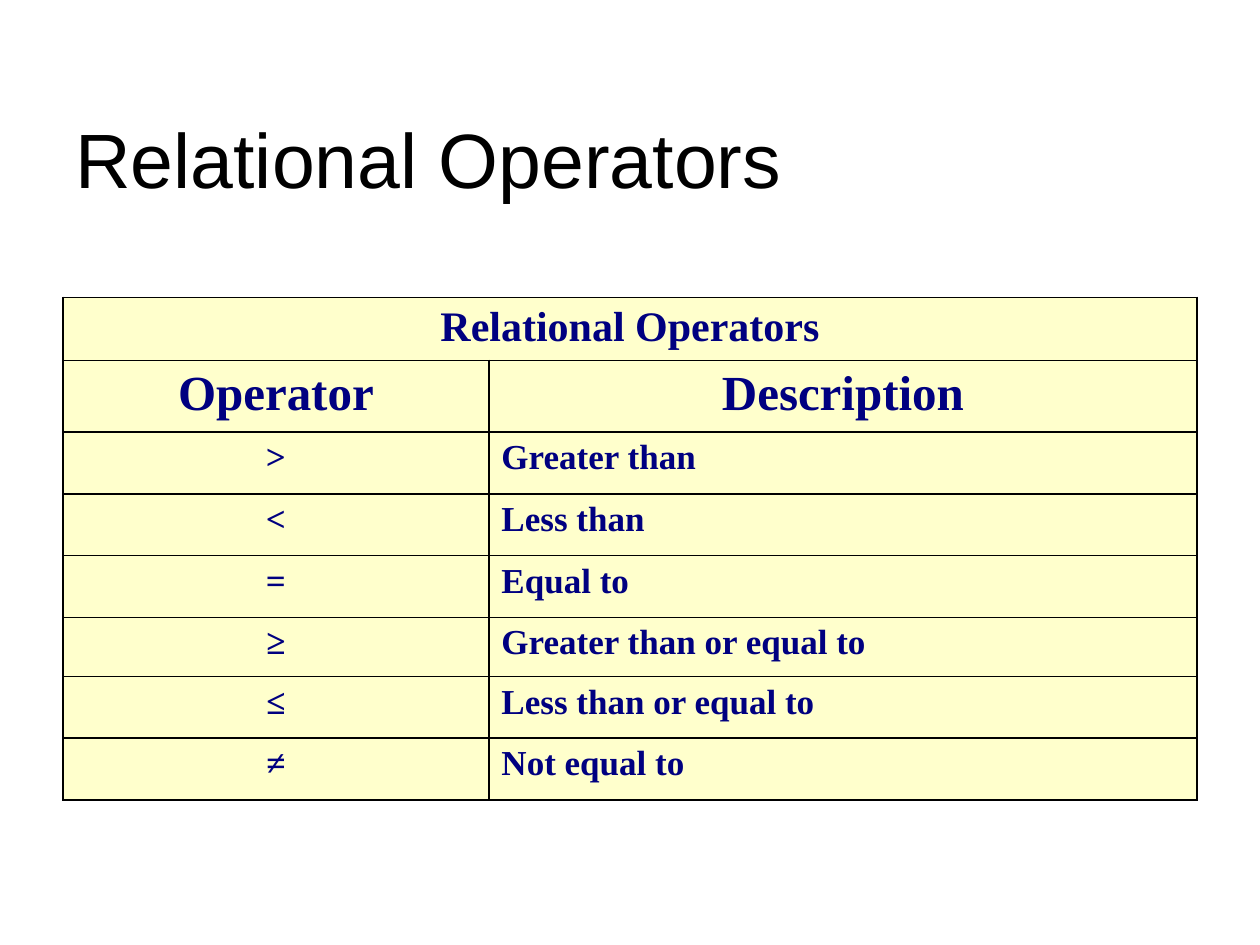
"""Build a slide with a table of relational operators."""
from lxml.etree import SubElement
from pptx import Presentation
from pptx.dml.color import RGBColor
from pptx.enum.text import MSO_ANCHOR, PP_ALIGN
from pptx.oxml.ns import qn
from pptx.util import Inches, Pt

BLACK = RGBColor(0x00, 0x00, 0x00)
NAVY = RGBColor(0x00, 0x00, 0x80)
CREAM = RGBColor(0xFF, 0xFF, 0xCC)

COLUMN_WIDTHS = [3.38, 5.62]
ROW_HEIGHTS = [0.5, 0.57, 0.49, 0.49, 0.49, 0.47, 0.49, 0.49]
OPERATORS = [
    (">", "Greater than"),
    ("<", "Less than"),
    ("=", "Equal to"),
    ("≥", "Greater than or equal to"),
    ("≤", "Less than or equal to"),
    ("≠", "Not equal to"),
]


def add_span(para, text, font_name, size, color, bold=False):
    span = para.add_run()
    span.text = text
    span.font.name = font_name
    span.font.size = Pt(size)
    span.font.color.rgb = color
    span.font.bold = bold


def add_title(page, text):
    box = page.shapes.add_textbox(Inches(0.5), Inches(0.5), Inches(9), Inches(1.5))
    frame = box.text_frame
    frame.word_wrap = True
    frame.vertical_anchor = MSO_ANCHOR.MIDDLE
    add_span(frame.paragraphs[0], text, "Arial", 44, BLACK)


def style_cell(cell):
    properties = cell._tc.get_or_add_tcPr()
    for side in ("a:lnL", "a:lnR", "a:lnT", "a:lnB"):
        line = SubElement(properties, qn(side), w=str(Pt(1)))
        fill = SubElement(line, qn("a:solidFill"))
        SubElement(fill, qn("a:srgbClr"), val=str(BLACK))
    cell.fill.solid()
    cell.fill.fore_color.rgb = CREAM


def write_cell(cell, text, size, alignment=PP_ALIGN.CENTER):
    para = cell.text_frame.paragraphs[0]
    para.alignment = alignment
    add_span(para, text, "Times New Roman", size, NAVY, bold=True)


def add_operator_table(page):
    frame = page.shapes.add_table(
        len(ROW_HEIGHTS), len(COLUMN_WIDTHS), Inches(0.5), Inches(2.36),
        Inches(sum(COLUMN_WIDTHS)), Inches(sum(ROW_HEIGHTS)))
    table = frame.table
    for column, width in zip(table.columns, COLUMN_WIDTHS):
        column.width = Inches(width)
    for row, height in zip(table.rows, ROW_HEIGHTS):
        row.height = Inches(height)
    for cell in table.iter_cells():
        style_cell(cell)

    table.cell(0, 0).merge(table.cell(0, 1))
    write_cell(table.cell(0, 0), "Relational Operators", 24)
    for column, heading in enumerate(("Operator", "Description")):
        write_cell(table.cell(1, column), heading, 28)
    for row, (symbol, description) in enumerate(OPERATORS, start=2):
        write_cell(table.cell(row, 0), symbol, 20)
        write_cell(table.cell(row, 1), description, 20, PP_ALIGN.LEFT)


def main():
    deck = Presentation()
    deck.slide_width = Inches(10)
    deck.slide_height = Inches(7.5)
    page = deck.slides.add_slide(deck.slide_layouts[6])
    add_title(page, "Relational Operators")
    add_operator_table(page)
    deck.save("out.pptx")


if __name__ == "__main__":
    main()
